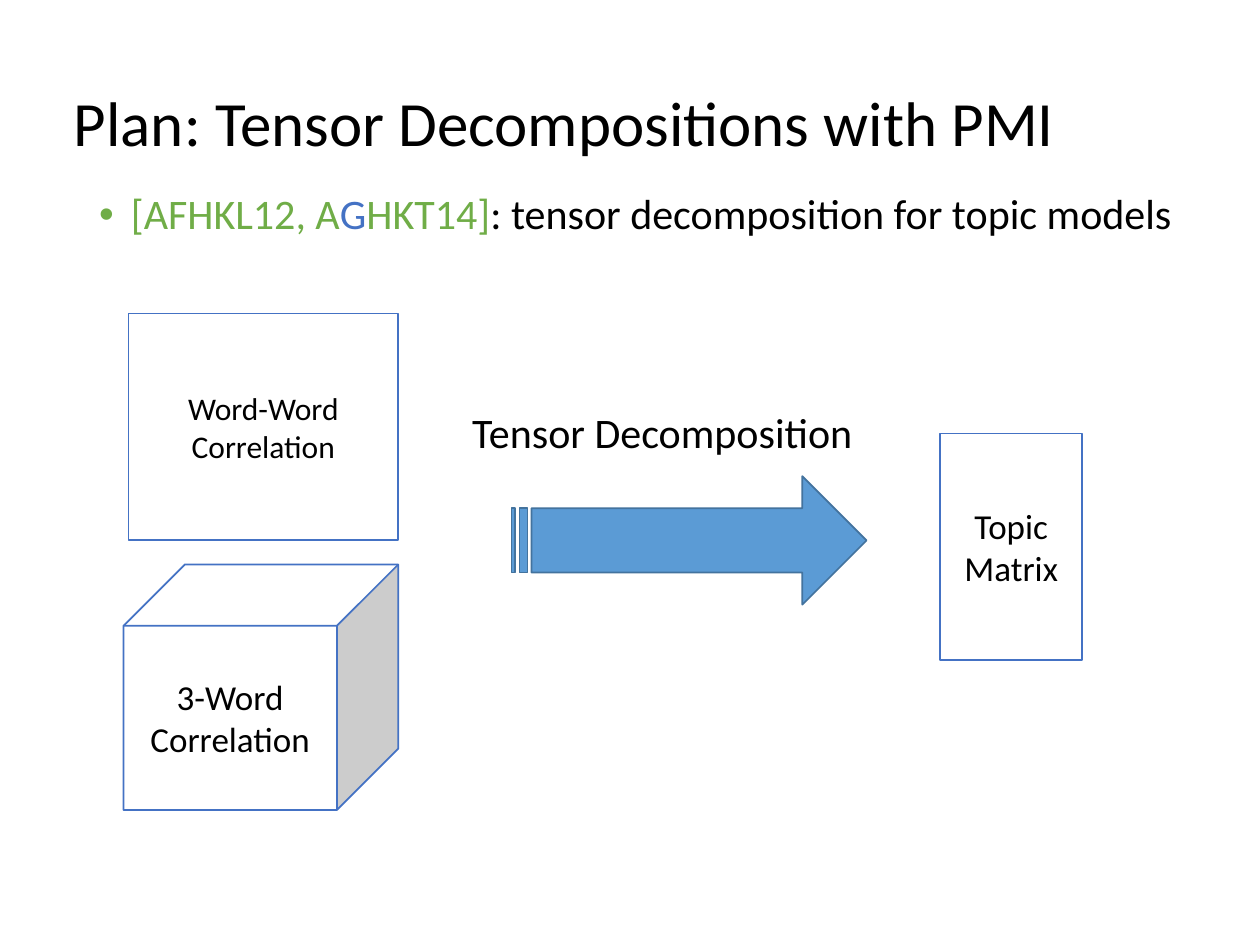
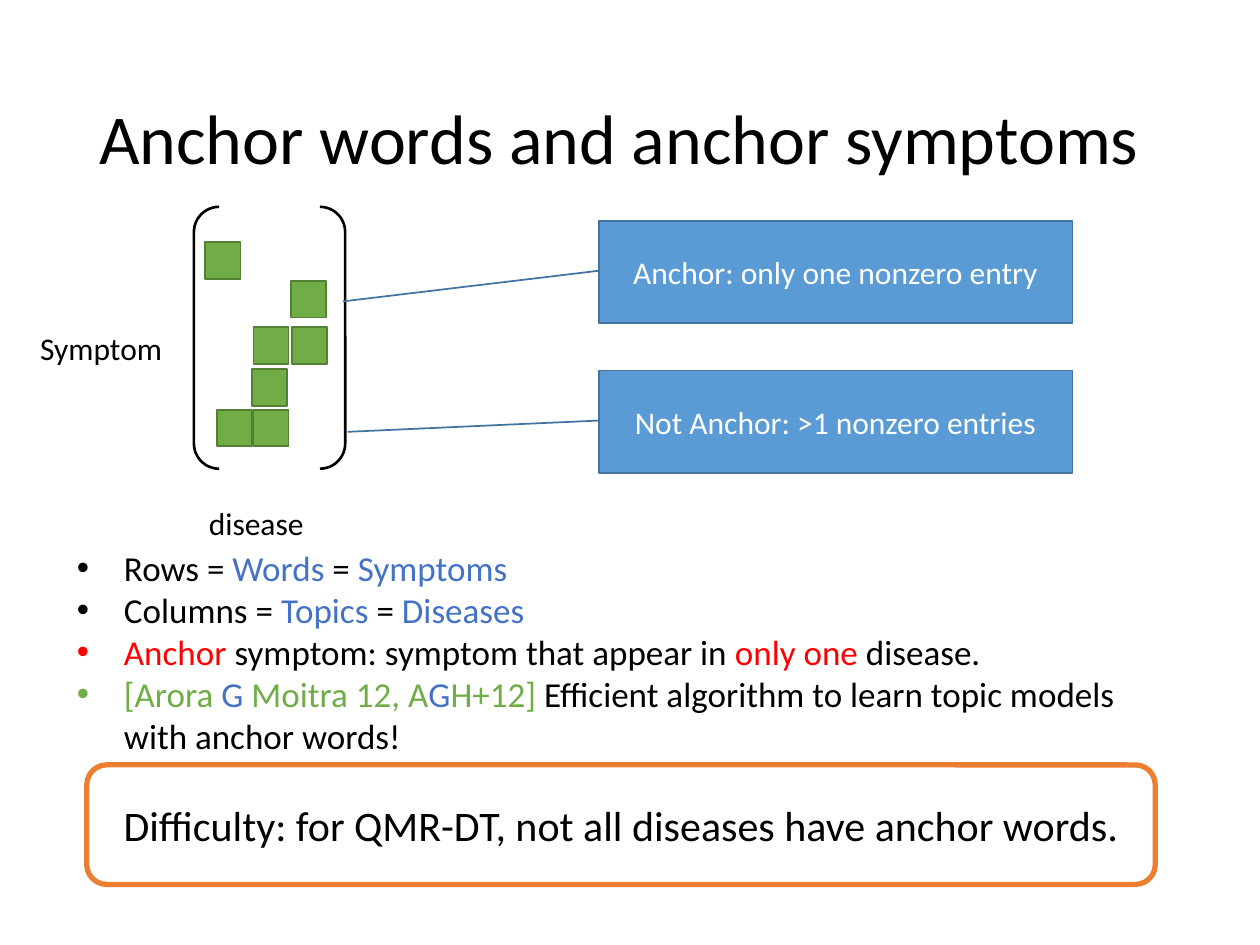
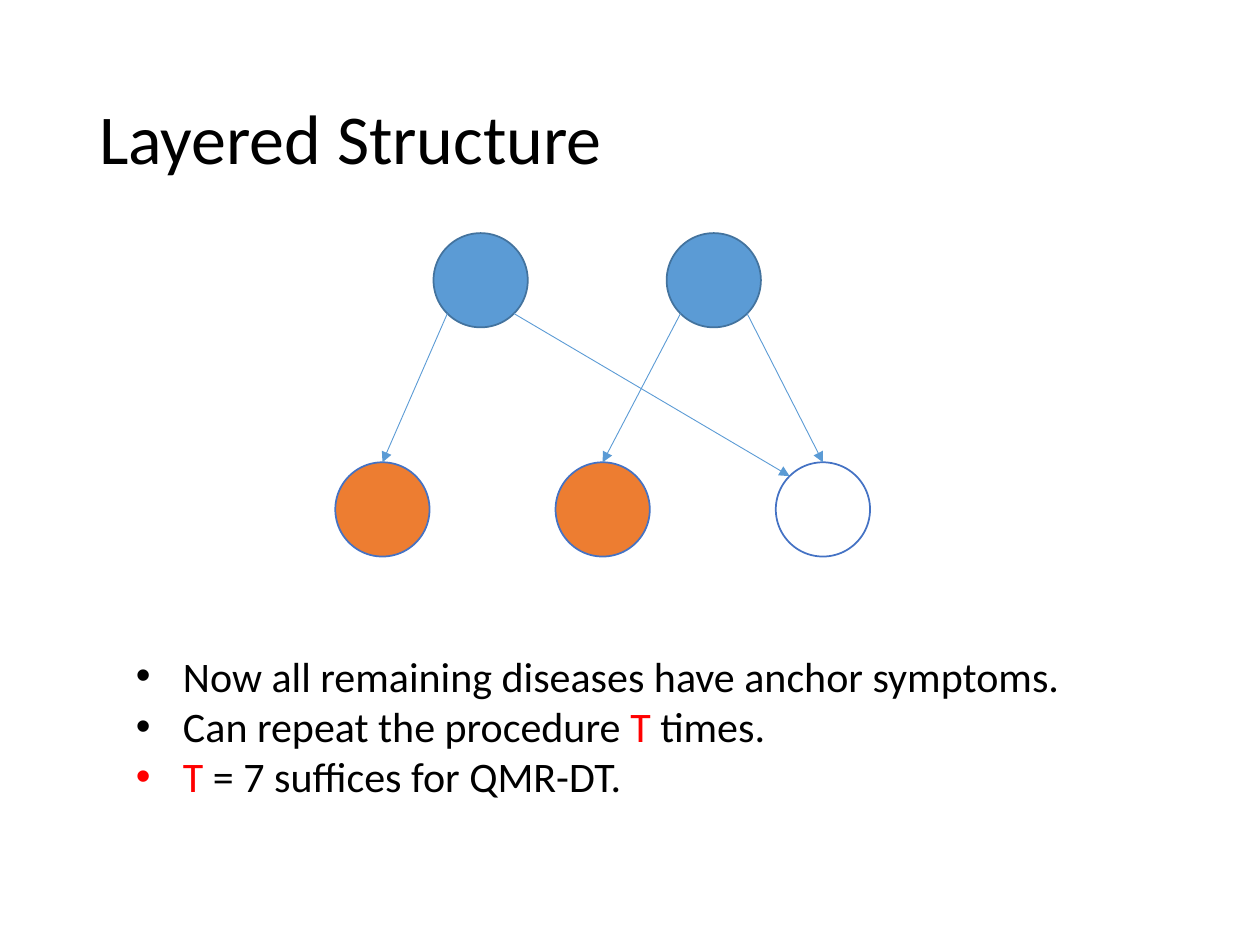
from math import copysign, sqrt

from lxml.etree import SubElement
from pptx import Presentation
from pptx.dml.color import RGBColor
from pptx.enum.shapes import MSO_CONNECTOR, MSO_SHAPE
from pptx.enum.text import MSO_ANCHOR, MSO_AUTO_SIZE, PP_ALIGN
from pptx.oxml.ns import qn
from pptx.util import Cm, Pt

FONT = "Calibri"
COLORS = {
    "black": "000000",
    "white": "FFFFFF",
    "blue": "4472C4",
    "sky": "5B9BD5",
    "steel": "43739E",
    "green": "70AD47",
    "moss": "538035",
    "orange": "ED7D31",
    "red": "FF0000",
}
SQUARE_SIZE = (0.71, 0.74)
NODE_SIZE = 1.9


def color(name):
    return RGBColor.from_string(COLORS[name])


def add_bullet(para, indent):
    properties = para._p.get_or_add_pPr()
    properties.set("marL", str(Cm(indent)))
    properties.set("indent", str(-Cm(indent)))
    SubElement(properties, qn("a:buFont")).set("typeface", "Arial")
    SubElement(properties, qn("a:buChar")).set("char", "•")


def write(frame, paragraphs, size=18, ink="black", align=PP_ALIGN.LEFT,
          anchor=MSO_ANCHOR.TOP, wrap=True, spacing=None, bullet=None):
    if isinstance(paragraphs, str):
        paragraphs = [[paragraphs]]
    frame.word_wrap = wrap
    frame.vertical_anchor = anchor
    for index, spans in enumerate(paragraphs):
        para = frame.paragraphs[0] if index == 0 else frame.add_paragraph()
        para.alignment = align
        if spacing:
            para.line_spacing = spacing
        if bullet:
            add_bullet(para, bullet)
        for part in spans:
            text, tint = (part, ink) if isinstance(part, str) else part
            span = para.add_run()
            span.text = text
            span.font.name = FONT
            span.font.size = Pt(size)
            span.font.color.rgb = color(tint)


def add_text(slide, place, paragraphs, **style):
    box = slide.shapes.add_textbox(*map(Cm, place))
    write(box.text_frame, paragraphs, **style)
    if not style.get("wrap", True):
        box.text_frame.auto_size = MSO_AUTO_SIZE.SHAPE_TO_FIT_TEXT


def add_title(slide, text, left=1.75, top=1.02, size=40):
    add_text(slide, (left, top, 21.89, 3.68), text, size=size,
             anchor=MSO_ANCHOR.MIDDLE, spacing=0.9)


def add_figure(slide, kind, place, fill="white", line="blue", weight=1,
               text=None, adjustments=(), **style):
    shape = slide.shapes.add_shape(kind, *map(Cm, place))
    shape.shadow.inherit = False
    if fill:
        shape.fill.solid()
        shape.fill.fore_color.rgb = color(fill)
    else:
        shape.fill.background()
    shape.line.color.rgb = color(line)
    shape.line.width = Pt(weight)
    for index, value in enumerate(adjustments):
        shape.adjustments[index] = value
    if text:
        write(shape.text_frame, text, align=PP_ALIGN.CENTER,
              anchor=MSO_ANCHOR.MIDDLE, **style)


def add_arrow(slide, start, end):
    arrow = slide.shapes.add_connector(MSO_CONNECTOR.STRAIGHT, *map(Cm, start + end))
    arrow.line.color.rgb = color("sky")
    arrow.line.width = Pt(0.5)
    SubElement(arrow.line._get_or_add_ln(), qn("a:tailEnd")).set("type", "triangle")
    SubElement(arrow._element.spPr, qn("a:effectLst"))


def node_port(node, across, down):
    radius = NODE_SIZE / 2
    length = sqrt(across ** 2 + down ** 2)
    return tuple(corner + radius + radius * step / length
                 for corner, step in zip(node, (across, down)))


def build_plan(slide):
    add_text(slide, (1.75, 3.78, 22.91, 13.39), [
        [("[AFHKL12, A", "green"), ("G", "blue"), ("HKT14]", "green"),
         ": tensor decomposition for topic models"],
    ], size=24, spacing=0.9, bullet=0.64)
    add_figure(slide, MSO_SHAPE.RECTANGLE, (2.59, 6.32, 5.44, 4.57),
               text="Word-Word Correlation")
    add_figure(slide, MSO_SHAPE.CUBE, (2.49, 11.38, 5.54, 4.95),
               text="3-Word Correlation", size=20)
    add_figure(slide, MSO_SHAPE.STRIPED_RIGHT_ARROW, (10.31, 9.6, 7.16, 2.59),
               fill="sky", line="steel")
    add_text(slide, (9.27, 8.08, 8.26, 1.27), "Tensor Decomposition",
             size=24, wrap=False)
    add_figure(slide, MSO_SHAPE.RECTANGLE, (18.95, 8.74, 2.87, 4.57),
               text="Topic Matrix", size=20)
    add_title(slide, "Plan: Tensor Decompositions with PMI", left=1.24, top=0.71, size=36)


def build_anchors(slide):
    add_title(slide, "Anchor words and anchor symptoms")
    add_figure(slide, MSO_SHAPE.DOUBLE_BRACKET, (3.91, 4.17, 3.05, 5.28), fill=None,
               line="black", weight=1.5)
    entries = [(4.14, 4.88), (5.08, 7.44), (5.87, 5.66), (4.37, 8.26),
               (5.11, 8.26), (5.11, 6.6), (5.89, 6.6)]
    for entry in entries:
        add_figure(slide, MSO_SHAPE.RECTANGLE, entry + SQUARE_SIZE,
                   fill="green", line="moss")
    add_text(slide, (1.3, 10.9, 22.81, 4.52), [
        ["Rows = ", ("Words", "blue"), " = ", ("Symptoms", "blue")],
        ["Columns = ", ("Topics", "blue"), " = ", ("Diseases", "blue")],
        [("Anchor", "red"), " symptom: symptom that appear in ",
         ("only one ", "red"), "disease."],
        [("[Arora ", "green"), ("G ", "blue"), ("Moitra 12, A", "green"),
         ("G", "blue"), ("H+12]", "green"),
         " Efficient algorithm to learn topic models with anchor words!"],
    ], size=20, bullet=0.95)
    add_text(slide, (0.56, 6.5, 3, 1.02), "Symptom", wrap=False)
    add_text(slide, (3.96, 10.03, 2.44, 1.02), "disease", wrap=False)
    callouts = [
        (4.45, "Anchor: only one nonzero entry", (0.79, -0.54)),
        (7.47, "Not Anchor: >1 nonzero entries", (0.6, -0.53)),
    ]
    for top, text, target in callouts:
        add_figure(slide, MSO_SHAPE.LINE_CALLOUT_1, (12.07, top, 9.55, 2.06),
                   fill="sky", line="steel", text=text, ink="white",
                   adjustments=(0.49, 0) + target)
    add_figure(slide, MSO_SHAPE.ROUNDED_RECTANGLE, (1.75, 15.42, 21.54, 2.41),
               line="orange", weight=3, size=24,
               text="Difficulty: for QMR-DT, not all diseases have anchor words.")


def build_layers(slide):
    add_title(slide, "Layered Structure")
    diseases = [(8.74 + 4.7 * column, 4.7) for column in range(2)]
    symptoms = [(6.76 + 4.44 * column, 9.32) for column in range(3)]
    node_styles = [("sky", "steel")] * 2 + [("orange", "blue")] * 2 + [("white", "blue")]
    for node, (fill, line) in zip(diseases + symptoms, node_styles):
        add_figure(slide, MSO_SHAPE.OVAL, node + (NODE_SIZE, NODE_SIZE),
                   fill=fill, line=line)
    top, top_left = (0, -1), (-1, -1)
    for disease, symptom, port in [(0, 0, top), (0, 2, top_left), (1, 2, top), (1, 1, top)]:
        start, end = diseases[disease], symptoms[symptom]
        side = copysign(1, end[0] - start[0])
        add_arrow(slide, node_port(start, side, 1), node_port(end, *port))
    add_text(slide, (2.49, 12.98, 19.3, 3.33), [
        ["Now all remaining diseases have anchor symptoms."],
        ["Can repeat the procedure ", ("T", "red"), " times."],
        [("T", "red"), " = 7 suffices for QMR-DT."],
    ], size=24, wrap=False, bullet=0.95)


def main():
    deck = Presentation()
    deck.slide_width, deck.slide_height = Cm(25.4), Cm(19.05)
    for build in (build_plan, build_anchors, build_layers):
        build(deck.slides.add_slide(deck.slide_layouts[6]))
    deck.save("out.pptx")


if __name__ == "__main__":
    main()
